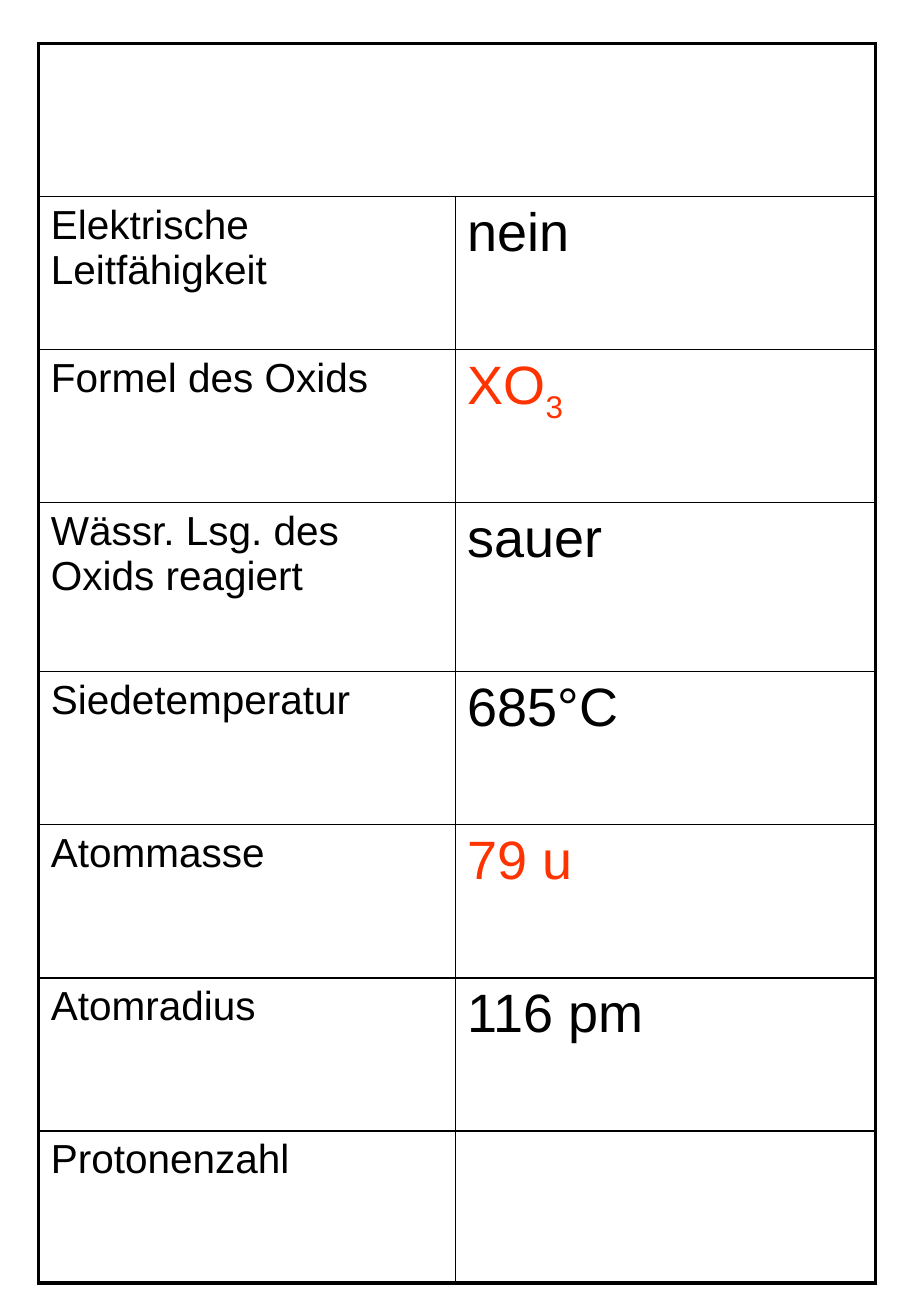
from lxml.etree import SubElement
from pptx import Presentation
from pptx.dml.color import RGBColor
from pptx.oxml.ns import qn
from pptx.util import Cm, Pt

BLACK, RED = "000000", "FF3300"
THIN, THICK = Pt(1), Pt(2.25)
LABEL_SIZE, VALUE_SIZE = 24, 32
COLUMN_WIDTHS = [8.71, 8.79]
ROW_HEIGHTS = [3.2, 3.2, 3.2, 3.53, 3.2, 3.2, 3.2, 3.18]

# Label, value, subscript, value colour
PROPERTIES = [
    ("Elektrische Leitfähigkeit", "nein", "", BLACK),
    ("Formel des Oxids", "XO", "3", RED),
    ("Wässr. Lsg. des Oxids reagiert", "sauer", "", BLACK),
    ("Siedetemperatur", "685°C", "", BLACK),
    ("Atommasse", "79 u", "", RED),
    ("Atomradius", "116 pm", "", BLACK),
    ("Protonenzahl", "", "", BLACK),
]


def color(value):
    return RGBColor.from_string(value)


def set_borders(cell, widths):
    """Draw the left, right, top and bottom borders in black."""
    properties = cell._tc.get_or_add_tcPr()
    for side, width in zip("LRTB", widths):
        line = SubElement(properties, qn(f"a:ln{side}"), w=str(width))
        fill = SubElement(line, qn("a:solidFill"))
        SubElement(fill, qn("a:srgbClr"), val=BLACK)


def write_text(cell, text, size, shade, subscript=""):
    para = cell.text_frame.paragraphs[0]
    para.font.name = "Arial"
    para.font.size = Pt(size)
    para.font.color.rgb = color(shade)
    for part, offset in ((text, None), (subscript, "-25000")):
        if part:
            span = para.add_run()
            span.text = part
            span.font.name = "Arial"
            span.font.size = Pt(size)
            span.font.color.rgb = color(shade)
            if offset:
                span.font._element.set("baseline", offset)


def add_property_table(page, left, top):
    rows, columns = len(ROW_HEIGHTS), len(COLUMN_WIDTHS)
    frame = page.shapes.add_table(rows, columns, left, top,
                                  Cm(sum(COLUMN_WIDTHS)), Cm(sum(ROW_HEIGHTS)))
    table = frame.table
    table.first_row = table.horz_banding = False
    for column, width in zip(table.columns, COLUMN_WIDTHS):
        column.width = Cm(width)
    for row, height in zip(table.rows, ROW_HEIGHTS):
        row.height = Cm(height)

    # Empty heading across both columns
    table.cell(0, 0).merge(table.cell(0, columns - 1))

    # Thick outer frame, thin inner lines
    for r in range(rows):
        for c in range(columns):
            cell = table.cell(r, c)
            outer = (c == 0, c == columns - 1 or r == 0, r == 0, r == rows - 1)
            set_borders(cell, [THICK if edge else THIN for edge in outer])
            cell.fill.background()

    # Labels and values
    for r, (label, value, subscript, shade) in enumerate(PROPERTIES, start=1):
        write_text(table.cell(r, 0), label, LABEL_SIZE, BLACK)
        write_text(table.cell(r, 1), value, VALUE_SIZE, shade, subscript)


def main():
    deck = Presentation()
    deck.slide_width, deck.slide_height = Cm(19.05), Cm(27.51)
    page = deck.slides.add_slide(deck.slide_layouts[6])
    add_property_table(page, Cm(0.81), Cm(0.91))
    deck.save("out.pptx")


if __name__ == "__main__":
    main()
